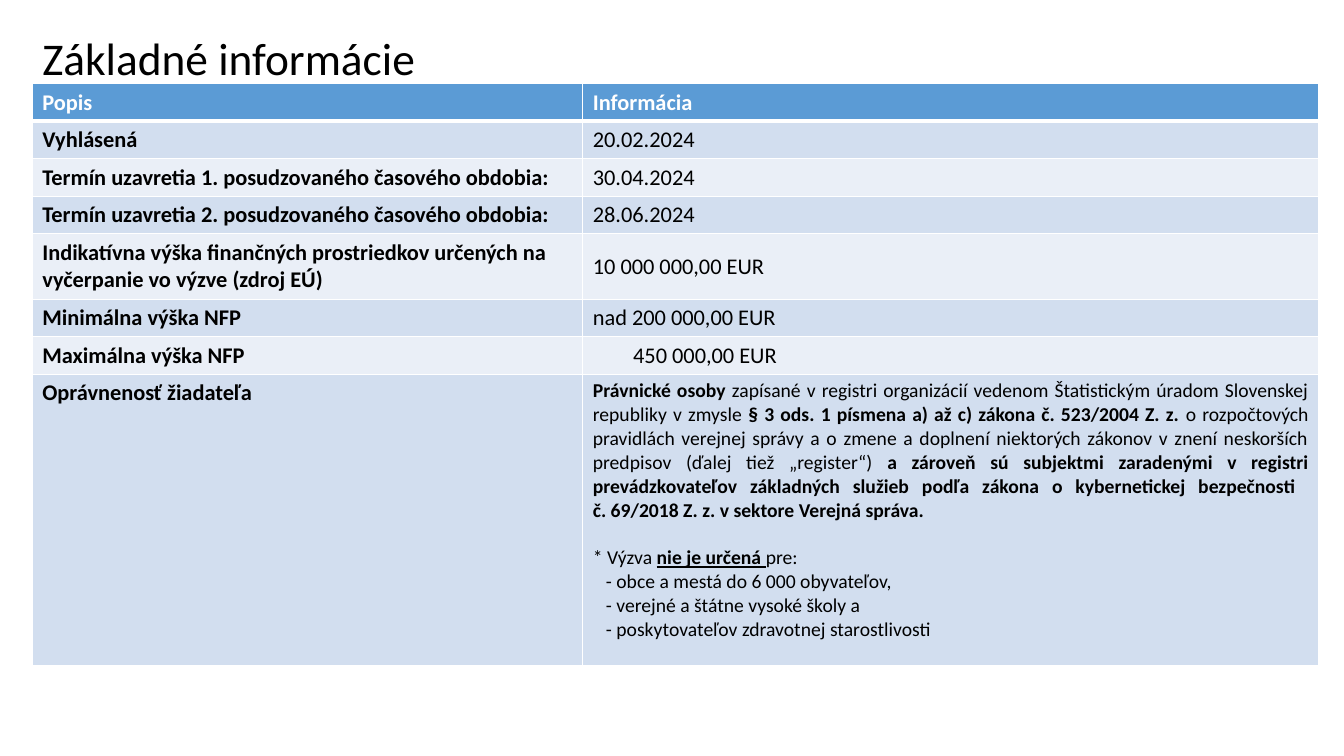
from lxml.etree import SubElement
from pptx import Presentation
from pptx.dml.color import RGBColor
from pptx.enum.text import MSO_ANCHOR as ANCHOR, MSO_AUTO_SIZE as AUTO, PP_ALIGN as ALIGN
from pptx.oxml.ns import qn
from pptx.util import Inches, Pt

COLORS = {
    "white": "FFFFFF",
    "black": "000000",
    "header": "5B9BD5",
    "band_dark": "D2DEEF",
    "band_light": "EAEFF7",
}
FONT = "Calibri"
COL_WIDTHS = [5.46, 7.3]
ROW, TALL_ROW, LAST_ROW = 0.37, 0.65, 2.89

# Label, value, row height
ROWS = [
    ("Popis", "Informácia", ROW),
    ("Vyhlásená", "20.02.2024", ROW),
    ("Termín uzavretia 1. posudzovaného časového obdobia:", "30.04.2024", ROW),
    ("Termín uzavretia 2. posudzovaného časového obdobia:", "28.06.2024", ROW),
    ("Indikatívna výška finančných prostriedkov určených na vyčerpanie vo výzve (zdroj EÚ)",
     "10 000 000,00 EUR", TALL_ROW),
    ("Minimálna výška NFP", "nad 200 000,00 EUR", ROW),
    ("Maximálna výška NFP", "450 000,00 EUR", ROW),
    ("Oprávnenosť žiadateľa", "", LAST_ROW),
]
INDENTED_ROW = 6

# Runs of the applicant paragraphs: text and format; "\n" is a line break
BOLD, PLAIN = {"bold": True}, {"bold": False}
APPLICANT = [
    ("Právnické osoby ", BOLD),
    ("zapísané v registri organizácií vedenom Štatistickým úradom Slovenskej republiky "
     "v zmysle ", PLAIN),
    ("§ 3 ods. 1 písmena a) až c) zákona č. 523/2004 Z. z.", BOLD),
    (" o rozpočtových pravidlách verejnej správy a o zmene a doplnení niektorých zákonov "
     "v znení neskorších predpisov (ďalej tiež „register“) ", PLAIN),
    ("a zároveň sú subjektmi zaradenými v registri prevádzkovateľov základných služieb "
     "podľa zákona o kybernetickej bezpečnosti ", BOLD),
    ("\n", BOLD),
    ("č. 69/2018 Z. z. v sektore Verejná správa.", BOLD),
]
EXCLUDED_INTRO = [
    ("* Výzva ", PLAIN),
    ("nie je určená ", {"bold": True, "underline": True}),
    ("pre:", PLAIN),
]
EXCLUDED = [
    "- obce a mestá do 6 000 obyvateľov,",
    "- verejné a štátne vysoké školy a",
    "- poskytovateľov zdravotnej starostlivosti",
]


def add_runs(p, runs, size, color="black"):
    for text, fmt in runs:
        if text == "\n":
            p.add_line_break()
            continue
        r = p.add_run()
        r.text = text
        for name, value in {"name": FONT, "size": Pt(size), **fmt}.items():
            setattr(r.font, name, value)
        r.font.color.rgb = RGBColor.from_string(COLORS[color])


def set_indent(p, inches):
    p._p.get_or_add_pPr().set("marL", str(Inches(inches)))


def style_cell(cell, fill, top=1, bottom=1):
    tc_pr = cell._tc.get_or_add_tcPr()
    for side, width in {"L": 1, "R": 1, "T": top, "B": bottom}.items():
        ln = SubElement(tc_pr, qn(f"a:ln{side}"), w=str(Pt(width)))
        solid = SubElement(ln, qn("a:solidFill"))
        SubElement(solid, qn("a:srgbClr"), val=COLORS["white"])
    cell.fill.solid()
    cell.fill.fore_color.rgb = RGBColor.from_string(COLORS[fill])


def add_title(s, text, left, top, width, height):
    sp = s.shapes.title
    for name, value in {"left": left, "top": top, "width": width, "height": height}.items():
        setattr(sp, name, Inches(value))
    tf = sp.text_frame
    tf.auto_size = AUTO.NONE
    tf.vertical_anchor = ANCHOR.MIDDLE
    p = tf.paragraphs[0]
    p.alignment, p.line_spacing = ALIGN.LEFT, 0.9
    add_runs(p, [(text, PLAIN)], 32.4)


def fill_applicant(cell):
    tf = cell.text_frame
    paragraphs = [(APPLICANT, 0, 0), (EXCLUDED_INTRO, 0, 17)]
    paragraphs += [([(item, PLAIN)], 0.13, 0) for item in EXCLUDED]
    for i, (runs, indent, before) in enumerate(paragraphs):
        p = tf.add_paragraph() if i else tf.paragraphs[0]
        p.alignment, p.space_before = ALIGN.JUSTIFY, Pt(before)
        set_indent(p, indent)
        add_runs(p, runs, 14)


def add_info_table(s, left, top):
    height = sum(row[2] for row in ROWS)
    box = [Inches(v) for v in (left, top, sum(COL_WIDTHS), height)]
    table = s.shapes.add_table(len(ROWS), len(COL_WIDTHS), *box).table
    for col, width in zip(table.columns, COL_WIDTHS):
        col.width = Inches(width)

    for i, (label, value, row_height) in enumerate(ROWS):
        table.rows[i].height = Inches(row_height)
        header = i == 0
        fill = "header" if header else ("band_light", "band_dark")[i % 2]
        for j, text in enumerate((label, value)):
            cell = table.cell(i, j)
            style_cell(cell, fill, top=3 if i == 1 else 1, bottom=3 if header else 1)
            if row_height == TALL_ROW:
                cell.vertical_anchor = ANCHOR.MIDDLE
            if text:
                add_runs(cell.text_frame.paragraphs[0], [(text, {"bold": header or j == 0})],
                         16, "white" if header else "black")

    set_indent(table.cell(INDENTED_ROW, 1).text_frame.paragraphs[0], 0.4)
    fill_applicant(table.cell(len(ROWS) - 1, 1))


def main():
    prs = Presentation()
    prs.slide_width, prs.slide_height = Inches(13.33), Inches(7.5)
    s = prs.slides.add_slide(prs.slide_layouts[5])
    add_title(s, "Základné informácie", 0.32, 0.35, 10, 0.51)
    add_info_table(s, 0.32, 0.83)
    prs.save("out.pptx")


if __name__ == "__main__":
    main()
